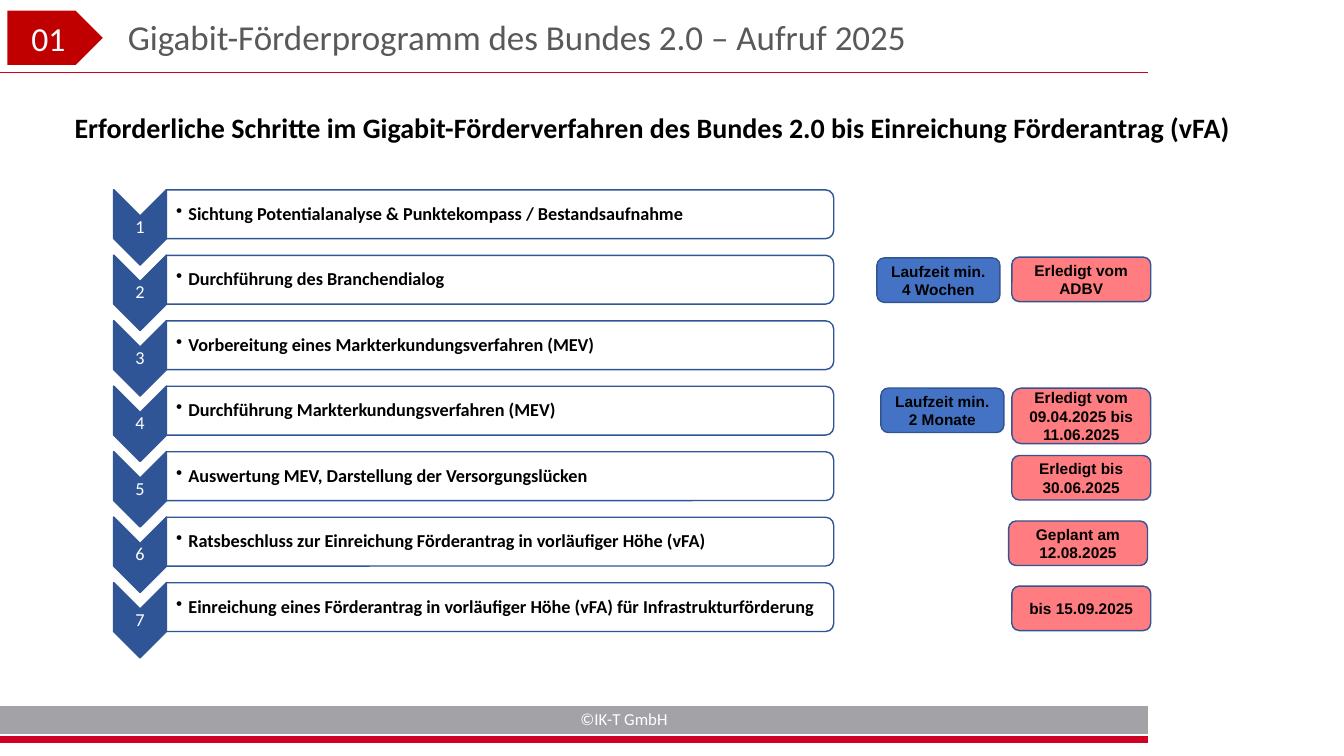
import pptx
import pptx.dml.color
import pptx.enum.shapes
import pptx.enum.text
import pptx.util
from lxml import etree
from pptx.oxml.ns import qn

Cm = pptx.util.Cm
Pt = pptx.util.Pt
SHAPE = pptx.enum.shapes.MSO_SHAPE
ALIGN = pptx.enum.text.PP_ALIGN
ANCHOR = pptx.enum.text.MSO_ANCHOR

RED = "CE0024"
NAVY = "2F5597"
BLUE = "4472C4"
PINK = "FF7C80"
BADGE_EDGE = "325491"
STEP_PITCH = 1.65
RULE_END = 28.93

STEPS = [
    "Sichtung Potentialanalyse & Punktekompass / Bestandsaufnahme",
    "Durchführung des Branchendialog",
    "Vorbereitung eines Markterkundungsverfahren (MEV)",
    "Durchführung Markterkundungsverfahren (MEV)",
    "Auswertung MEV, Darstellung der Versorgungslücken",
    "Ratsbeschluss zur Einreichung Förderantrag in vorläufiger Höhe (vFA)",
    "Einreichung eines Förderantrag in vorläufiger Höhe (vFA) für Infrastrukturförderung",
]

# Left, top, width, height in cm; fill; paragraphs
BADGES = [
    (22.1, 6.5, 3.1, 1.12, BLUE, ["Laufzeit min. 4 Wochen"]),
    (22.2, 9.78, 3.1, 1.12, BLUE, ["Laufzeit min.", "2 Monate"]),
    (25.5, 6.48, 3.5, 1.12, PINK, ["Erledigt vom ADBV"]),
    (25.5, 9.78, 3.5, 1.4, PINK, ["Erledigt vom 09.04.2025 bis", "11.06.2025"]),
    (25.5, 11.48, 3.5, 1.12, PINK, ["Erledigt bis", "30.06.2025"]),
    (25.42, 13.13, 3.5, 1.12, PINK, ["Geplant am", "12.08.2025"]),
    (25.5, 14.77, 3.5, 1.12, PINK, ["bis 15.09.2025"]),
]


def color(hex_string):
    return pptx.dml.color.RGBColor.from_string(hex_string)


def write(frame, lines, size, ink, name="Calibri", bold=False,
          align=ALIGN.LEFT, anchor=ANCHOR.MIDDLE, spacing=None):
    frame.word_wrap = True
    frame.vertical_anchor = anchor
    for index, line in enumerate(lines):
        para = frame.paragraphs[0] if index == 0 else frame.add_paragraph()
        para.text = line
        para.alignment = align
        para.line_spacing = spacing
        para.font.size = Pt(size)
        para.font.name = name
        para.font.bold = bold
        para.font.color.rgb = color(ink)


def add_text(page, left, top, width, height, text, size, ink, **style):
    box = page.shapes.add_textbox(Cm(left), Cm(top), Cm(width), Cm(height))
    write(box.text_frame, [text], size, ink, **style)
    return box


def set_insets(frame, left, others):
    frame.margin_left = Cm(left)
    frame.margin_top = frame.margin_right = frame.margin_bottom = Cm(others)


def add_bullet(para, indent):
    properties = para._p.get_or_add_pPr()
    properties.set("marL", str(Cm(indent)))
    properties.set("indent", str(-Cm(indent)))
    etree.SubElement(properties, qn("a:buChar")).set("char", "•")


def add_block(page, kind, left, top, width, height, fill, edge, weight):
    block = page.shapes.add_shape(kind, Cm(left), Cm(top), Cm(width), Cm(height))
    block.shadow.inherit = False
    if fill:
        block.fill.solid()
        block.fill.fore_color.rgb = color(fill)
    else:
        block.fill.background()
    block.line.color.rgb = color(edge)
    block.line.width = Pt(weight)
    return block


def add_turned_block(page, kind, center_x, center_y, width, height, fill):
    block = add_block(page, kind, center_x - width / 2, center_y - height / 2,
                      width, height, fill, NAVY, 1)
    block.rotation = 90


def add_rule(page, y, ink, weight):
    rule = page.shapes.add_connector(pptx.enum.shapes.MSO_CONNECTOR.STRAIGHT,
                                     Cm(0), Cm(y), Cm(RULE_END), Cm(y))
    rule.line.color.rgb = color(ink)
    rule.line.width = Pt(weight)
    etree.SubElement(rule._element.spPr, qn("a:effectLst"))


def add_step(page, number, text):
    offset = (number - 1) * STEP_PITCH
    add_turned_block(page, SHAPE.CHEVRON, 3.53, 5.73 + offset, 1.9, 1.33, NAVY)
    label = add_text(page, 2.87, 5.45 + offset, 1.32, 0.56, str(number), 13,
                     "FFFFFF", align=ALIGN.CENTER, spacing=0.9)
    set_insets(label.text_frame, 0.02, 0.02)
    add_turned_block(page, SHAPE.ROUND_2_SAME_RECTANGLE, 12.6, 5.4 + offset,
                     1.23, 16.82, None)
    box = add_text(page, 4.19, 4.84 + offset, 16.8, 1.12, text, 13,
                   "000000", bold=True, spacing=0.9)
    set_insets(box.text_frame, 0.25, 0.02)
    para = box.text_frame.paragraphs[0]
    para.level = 1
    add_bullet(para, 0.31)


def add_header(page):
    title = page.shapes.title
    title.left, title.top, title.width, title.height = Cm(2.97), Cm(0.13), Cm(25.73), Cm(1.45)
    title.text_frame.auto_size = pptx.enum.text.MSO_AUTO_SIZE.NONE
    write(title.text_frame, ["Gigabit-Förderprogramm des Bundes 2.0 – Aufruf 2025"],
          25, "595959", anchor=ANCHOR.BOTTOM, spacing=1.5)
    add_rule(page, 1.83, RED, 1.25)
    marker = add_block(page, SHAPE.PENTAGON, 0.15, 0.23, 2.5, 1.45, "C00000", "FFFFFF", 2.25)
    write(marker.text_frame, ["01"], 24, "FFFFFF", align=ALIGN.CENTER)
    add_text(page, 1.63, 2.67, 30.91, 1.12,
             "Erforderliche Schritte im Gigabit-Förderverfahren des Bundes 2.0 "
             "bis Einreichung Förderantrag (vFA)",
             20, "000000", bold=True, anchor=ANCHOR.TOP)


def add_footer(page):
    add_rule(page, 18.14, "A3A2A7", 19.75)
    add_text(page, 14.38, 17.73, 8.89, 0.79, "©IK-T GmbH", 12, "FFFFFF")
    add_rule(page, 18.64, RED, 5.25)


def main():
    deck = pptx.Presentation()
    deck.slide_width, deck.slide_height = Cm(33.87), Cm(19.05)
    page = deck.slides.add_slide(deck.slide_layouts[5])

    add_footer(page)
    add_header(page)

    # Steps of the procedure
    for number, text in enumerate(STEPS, start=1):
        add_step(page, number, text)

    # Durations and dates
    for left, top, width, height, fill, lines in BADGES:
        badge = add_block(page, SHAPE.ROUNDED_RECTANGLE, left, top, width, height,
                          fill, BADGE_EDGE, 1)
        write(badge.text_frame, lines, 11, "000000", name="Arial", bold=True,
              align=ALIGN.CENTER)

    deck.save("out.pptx")


if __name__ == "__main__":
    main()
